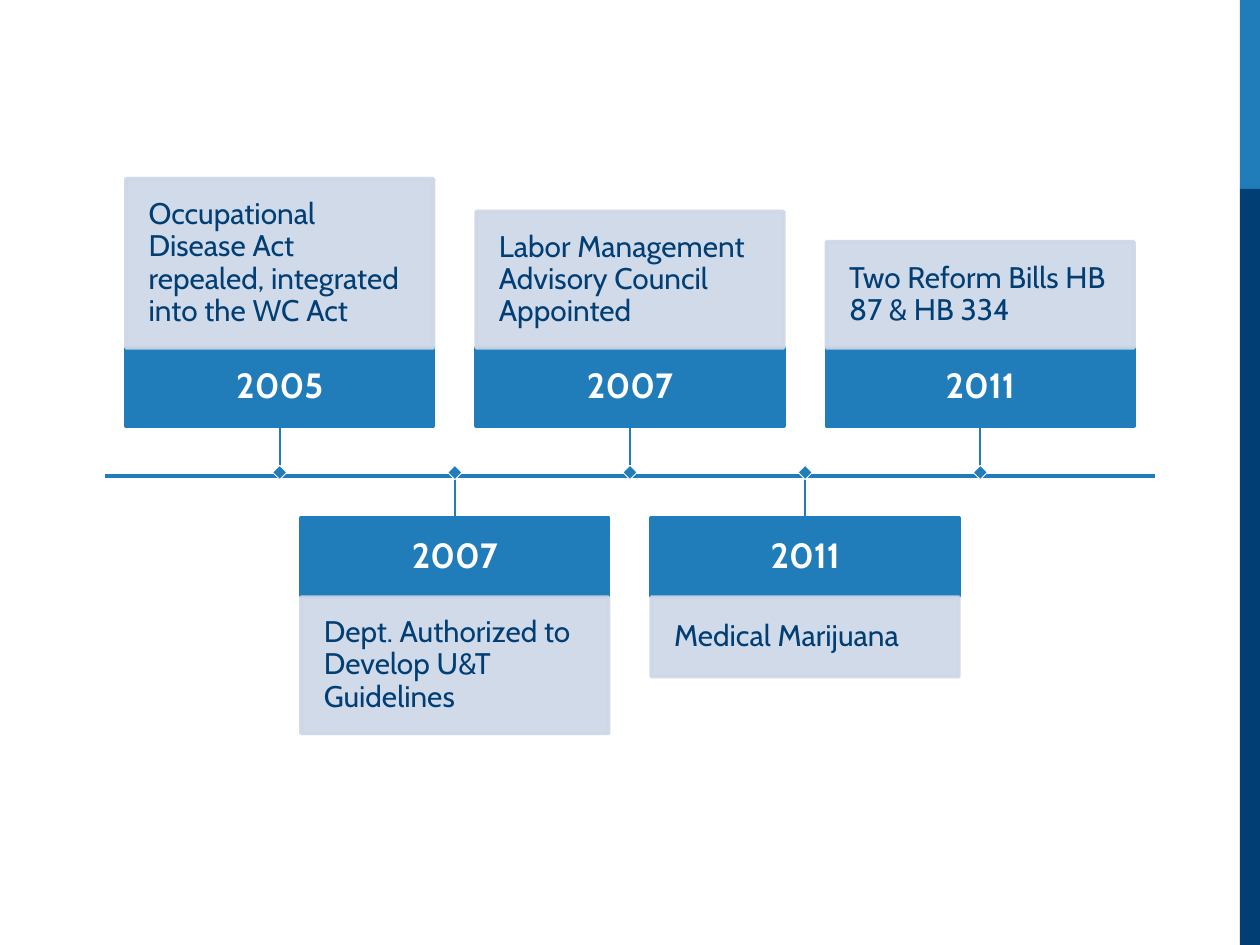
from pptx import Presentation
from pptx.dml.color import RGBColor
from pptx.enum.shapes import MSO_CONNECTOR as Link, MSO_SHAPE as Shape
from pptx.enum.text import MSO_ANCHOR as Anchor, PP_ALIGN as Align
from pptx.oxml.ns import qn
from pptx.util import Inches, Pt
from lxml.etree import SubElement

BLUE, NAVY, PALE, WHITE = "217CBA", "003E74", "CDD7E7", "FFFFFF"
color = RGBColor.from_string

deck = Presentation()
deck.slide_width, deck.slide_height = Inches(10), Inches(7.5)
slide = deck.slides.add_slide(deck.slide_layouts[6])
shapes = slide.shapes


def box(x, y, w, h, fill, edge=None, width=0):
    rect = shapes.add_shape(Shape.RECTANGLE, Inches(x), Inches(y), Inches(w), Inches(h))
    rect.shadow.inherit = False
    rect.fill.solid()
    rect.fill.fore_color.rgb = color(fill)
    if edge:
        rect.line.color.rgb = color(edge)
        rect.line.width = Pt(width)
    else:
        rect.line.fill.background()
    return rect


def rule(x1, y1, x2, y2, width):
    line = shapes.add_connector(Link.STRAIGHT, Inches(x1), Inches(y1), Inches(x2), Inches(y2))
    line.line.color.rgb = color(BLUE)
    line.line.width = Pt(width)
    SubElement(line._element.spPr, qn("a:effectLst"))


# Side bars
box(9.84, 0, 0.16, 1.5, BLUE)
box(9.84, 1.5, 0.16, 6, NAVY)

# Time axis
rule(0.83, 3.78, 9.17, 3.78, 2.25)

# Events alternate above and below the axis: year, text, text box height
events = [
    ("2005", "Occupational Disease Act repealed, integrated into the WC Act", 1.34),
    ("2007", "Dept. Authorized to Develop U&T Guidelines", 1.08),
    ("2007", "Labor Management Advisory Council Appointed", 1.08),
    ("2011", "Medical Marijuana", 0.63),
    ("2011", "Two Reform Bills HB 87 & HB 334", 0.84),
]
wide, dot = 2.44, 0.08
for i, (year, note, tall) in enumerate(events):
    mid = 2.22 + 1.39 * i
    left = mid - wide / 2
    above = i % 2 == 0

    # Year and note boxes
    head = box(left, 2.76 if above else 4.11, wide, 0.62, BLUE, BLUE, 2.25)
    body = box(left, 2.76 - tall if above else 4.74, wide, tall, PALE, PALE, 2.25)
    for tint in body._element.spPr.iter(qn("a:srgbClr")):
        SubElement(tint, qn("a:alpha")).set("val", "90000")

    for part, text, size, ink, bold, align, pad in (
        (head, year, 20, WHITE, True, Align.CENTER, 0.11),
        (body, note, 17, NAVY, False, Align.LEFT, 0.18),
    ):
        frame = part.text_frame
        frame.word_wrap = True
        frame.vertical_anchor = Anchor.MIDDLE
        frame.margin_left = frame.margin_right = Inches(pad)
        frame.margin_top = frame.margin_bottom = Inches(pad)
        para = frame.paragraphs[0]
        para.text = text
        para.alignment = align
        para.line_spacing = 0.9
        para.font.name = "Cabin"
        para.font.size = Pt(size)
        para.font.bold = bold
        para.font.color.rgb = color(ink)

    # Stem and marker
    rule(mid, 3.39 if above else 3.75, mid, 3.75 if above else 4.11, 1)
    mark = box(mid - dot / 2, 3.71, dot, dot, BLUE, WHITE, 0.5)
    mark.rotation = 45

deck.save("out.pptx")
